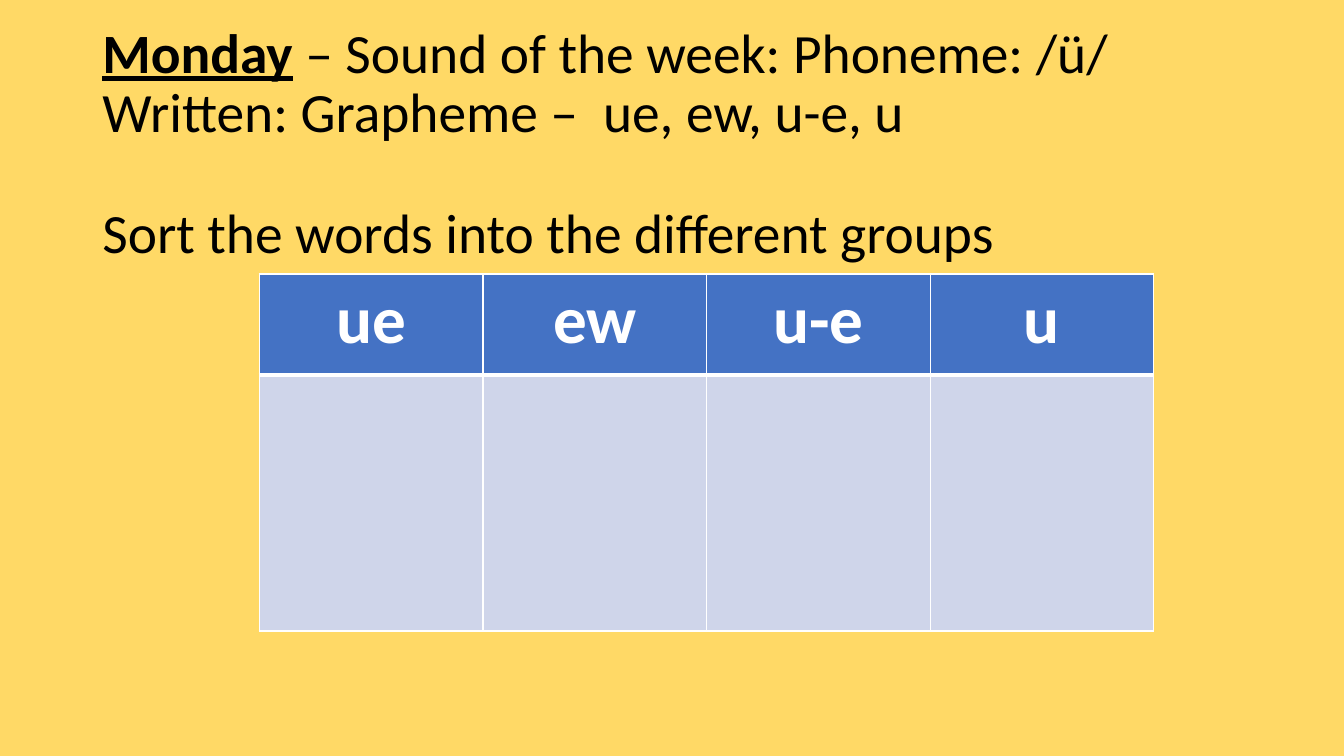
from dataclasses import dataclass

from lxml.etree import SubElement
from pptx import Presentation
from pptx.dml.color import RGBColor
from pptx.enum.text import MSO_ANCHOR, MSO_AUTO_SIZE, PP_ALIGN
from pptx.oxml.ns import qn
from pptx.util import Emu, Pt

SCALE = 9525  # EMU in one px
FONT = "Calibri"
GOLD = RGBColor(0xFF, 0xD9, 0x66)
BLUE = RGBColor(0x44, 0x72, 0xC4)
PALE = RGBColor(0xCF, 0xD5, 0xEA)
WHITE = RGBColor(0xFF, 0xFF, 0xFF)
BLACK = RGBColor(0x00, 0x00, 0x00)


@dataclass
class Row:
    words: list[str]
    height: int
    fill: RGBColor
    top: int  # border widths in points
    base: int


@dataclass
class Line:
    runs: list[tuple[str, bool]]  # text, and whether it is stressed
    gap: float = 0


LINES = [
    Line([("Monday", True), (" – Sound of the week: Phoneme: /ü/", False)]),
    Line([("Written: Grapheme –  ue, ew, u-e, u", False)]),
    Line([("Sort the words into the different groups", False)], gap=43.5),
]
ROWS = [
    Row(["ue", "ew", "u-e", "u"], 96, BLUE, 1, 3),
    Row(["", "", "", ""], 244, PALE, 3, 1),
]
COL = 213


def px(size: int) -> Emu:
    return Emu(size * SCALE)


def add_run(para, text: str, size: float, color: RGBColor, bold: bool, under: bool = False) -> None:
    run = para.add_run()
    run.text = text
    font = run.font
    font.name, font.size, font.bold, font.underline = FONT, Pt(size), bold, under
    font.color.rgb = color


def add_edge(cell, side: str, width: int) -> None:
    props = cell._tc.get_or_add_tcPr()
    edge = SubElement(props, qn(f"a:{side}"), w=str(Pt(width)))
    fill = SubElement(edge, qn("a:solidFill"))
    SubElement(fill, qn("a:srgbClr"), val=str(WHITE))


def draw_title(title) -> None:
    title.left, title.top, title.width, title.height = map(px, (88, 69, 1104, 139))
    frame = title.text_frame
    frame.word_wrap = True
    frame.auto_size = MSO_AUTO_SIZE.NONE
    frame.vertical_anchor = MSO_ANCHOR.MIDDLE
    for i, line in enumerate(LINES):
        para = frame.add_paragraph() if i else frame.paragraphs[0]
        para.alignment = PP_ALIGN.LEFT
        para.line_spacing = 0.9
        para.space_before = Pt(line.gap)
        for text, stress in line.runs:
            add_run(para, text, 39.6, BLACK, stress, stress)


def draw_table(slide) -> None:
    count = len(ROWS[0].words)
    high = sum(row.height for row in ROWS)
    table = slide.shapes.add_table(
        len(ROWS), count, px(247), px(261), px(COL * count), px(high)).table
    for col in table.columns:
        col.width = px(COL)
    for r, row in enumerate(ROWS):
        table.rows[r].height = px(row.height)
        for c, word in enumerate(row.words):
            cell = table.cell(r, c)
            for side, width in (("lnL", 1), ("lnR", 1), ("lnT", row.top), ("lnB", row.base)):
                add_edge(cell, side, width)
            cell.fill.solid()
            cell.fill.fore_color.rgb = row.fill
            if word:
                para = cell.text_frame.paragraphs[0]
                para.alignment = PP_ALIGN.CENTER
                add_run(para, word, 48, WHITE, True)


def main() -> None:
    deck = Presentation()
    deck.slide_width, deck.slide_height = px(1280), px(720)
    slide = deck.slides.add_slide(deck.slide_layouts.get_by_name("Title Only"))

    # Background
    back = slide.background.fill
    back.solid()
    back.fore_color.rgb = GOLD

    # Heading and sorting grid
    draw_title(slide.shapes.title)
    draw_table(slide)
    deck.save("out.pptx")


if __name__ == "__main__":
    main()
